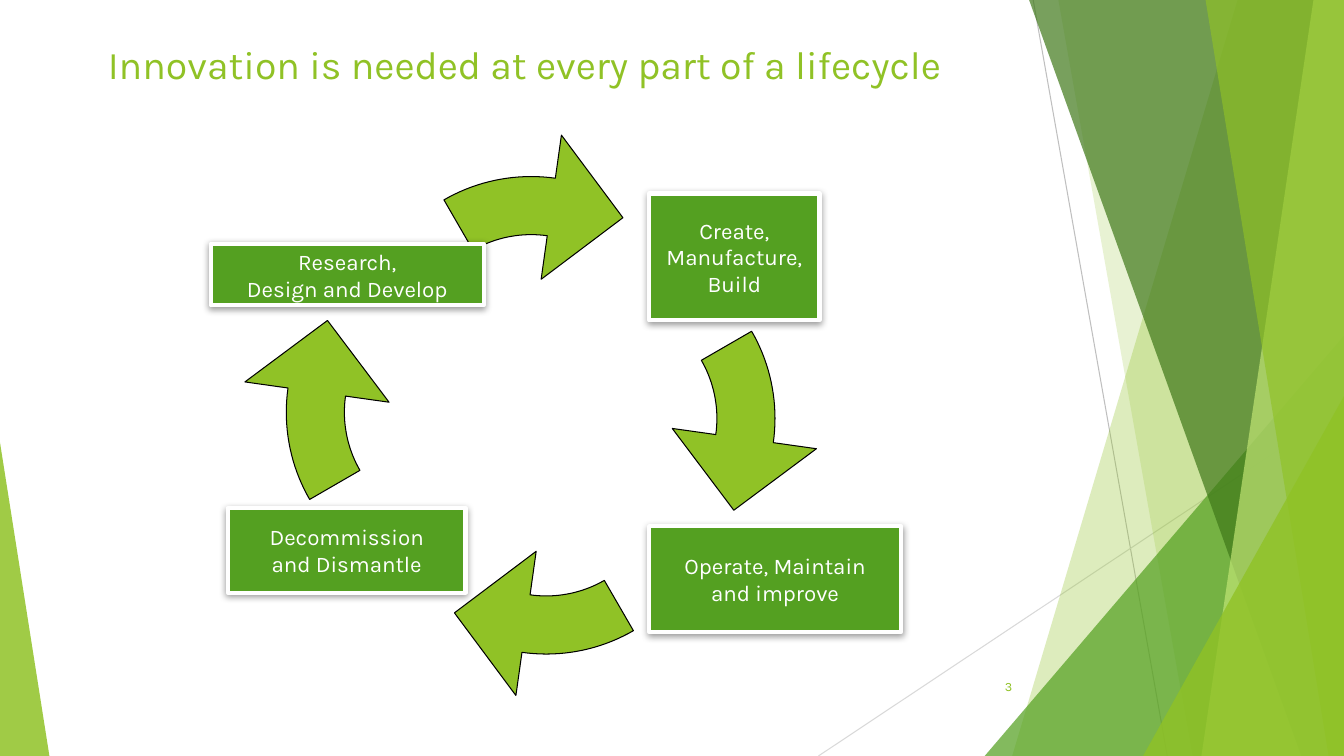
from math import cos, radians, sin

from lxml.etree import SubElement
from pptx import Presentation
from pptx.dml.color import RGBColor
from pptx.enum.shapes import MSO_CONNECTOR as Connector, MSO_SHAPE as Preset
from pptx.enum.text import MSO_ANCHOR as Anchor, MSO_AUTO_SIZE as AutoSize, PP_ALIGN as Align
from pptx.oxml.ns import qn
from pptx.util import Pt

FONT = "Karla"
LIME, GREEN, WHITE, BLACK = "90C226", "54A021", "FFFFFF", "000000"

# Coloured panels from back to front: x of the left edge at top and bottom
BACK_BANDS = [(884, 723, LIME, 30), (756, 851.8, LIME, 20)]
FRONT_BANDS = [(735.1, 929.5, "3F7819", 70), (938.2, 858.2, "C0E474", 70),
               (861.1, 949, LIME, 65)]
HAIRLINES = [(738, 0, 833.8, 540, "BFBFBF"), (960, 290.2, 584.6, 540, "D9D9D9")]

# Stage boxes, relative to the cycle: left, top, width, height, lines, wrap
STAGES = [
    (0.5, 78.2, 195.1, 43.9, ["Research,", "Design and Develop"], False),
    (313.7, 42.2, 121.7, 90.7, ["Create, Manufacture, Build"], True),
    (313.7, 279.8, 180, 75.6, ["Operate, Maintain", "and improve"], False),
    (12.7, 266.9, 169.9, 60.5, ["Decommission", "and Dismantle"], False),
]
# Centres of the arcs the arrows follow, each a quarter turn further
ARROW_CENTRES = [(229.4, 154.6), (279.1, 202.9), (240.2, 246.7), (179, 198.5)]
OUTER, INNER = 124.5, 83
TAIL_ANGLE, HEAD_ANGLE = -30, 8
HEAD = [(155.6, HEAD_ANGLE), (115.5, 34.6), (51.6, HEAD_ANGLE)]


def colour(hex_string):
    return RGBColor.from_string(hex_string)


def paint(shape, fill, opacity=100, line=None, weight=0.75):
    shape.shadow.inherit = False
    shape.fill.solid()
    shape.fill.fore_color.rgb = colour(fill)
    if opacity < 100:
        tint = shape.fill._xPr.find(qn("a:solidFill"))[0]
        SubElement(tint, qn("a:alpha"), val=str(opacity * 1000))
    if line:
        shape.line.color.rgb = colour(line)
        shape.line.width = Pt(weight)
    else:
        shape.line.fill.background()


def add_drop_shadow(shape):
    effects = shape._element.spPr.find(qn("a:effectLst"))
    drop = SubElement(effects, qn("a:outerShdw"), blurRad=str(Pt(5)), dist=str(Pt(1.6)),
                      dir="5400000", algn="ctr", rotWithShape="0")
    black = SubElement(drop, qn("a:srgbClr"), val=BLACK)
    SubElement(black, qn("a:alpha"), val="38000")


def write(frame, lines, size, hex_string, align):
    frame.vertical_anchor = Anchor.MIDDLE
    for number, line in enumerate(lines):
        paragraph = frame.add_paragraph() if number else frame.paragraphs[0]
        paragraph.alignment = align
        run = paragraph.add_run()
        run.text = line
        run.font.name = FONT
        run.font.size = Pt(size)
        run.font.color.rgb = colour(hex_string)


def add_outline(slide, points):
    corners = [(Pt(x), Pt(y)) for x, y in points]
    builder = slide.shapes.build_freeform(*corners[0])
    builder.add_line_segments(corners[1:], close=True)
    return builder.convert_to_shape()


def add_triangle(slide, left, top, right, bottom, apex, fill, opacity):
    """Draw a triangle whose apex lies at the given share of its width."""
    triangle = slide.shapes.add_shape(Preset.ISOSCELES_TRIANGLE, Pt(left), Pt(top),
                                      Pt(right - left), Pt(bottom - top))
    triangle.adjustments[0] = apex
    paint(triangle, fill, opacity)


def add_backdrop(slide, left, top, width, height):
    right, bottom = left + width, top + height

    def add_bands(bands):
        for upper, lower, fill, opacity in bands:
            band = add_outline(slide, [(left + upper, top), (right, top),
                                       (right, bottom), (left + lower, bottom)])
            paint(band, fill, opacity)

    for x1, y1, x2, y2, grey in HAIRLINES:
        hairline = slide.shapes.add_connector(Connector.STRAIGHT, Pt(left + x1), Pt(top + y1),
                                              Pt(left + x2), Pt(top + y2))
        hairline.line.color.rgb = colour(grey)
        hairline.line.width = Pt(0.75)
        SubElement(hairline._element.spPr, qn("a:effectLst"))
    add_bands(BACK_BANDS)
    add_triangle(slide, left + 703.4, top + 239.8, right, bottom, 1, GREEN, 72)
    add_bands(FRONT_BANDS)
    add_triangle(slide, left + 816.5, top + 283, right, bottom, 1, LIME, 80)
    add_triangle(slide, left, top + 316.1, left + 35.3, bottom, 0, LIME, 85)


def add_title(slide, left, top, width, height):
    title = slide.shapes.title
    title.left, title.top, title.width, title.height = map(Pt, (left, top, width, height))
    title.text_frame.auto_size = AutoSize.NONE
    write(title.text_frame, ["Innovation is needed at every part of a lifecycle"],
          28, LIME, Align.LEFT)


def add_page_number(slide, left, top, width, height):
    number = slide.shapes.add_textbox(Pt(left), Pt(top), Pt(width), Pt(height))
    number.text_frame.word_wrap = True
    write(number.text_frame, ["3"], 9, LIME, Align.RIGHT)


def add_curved_arrow(slide, centre_x, centre_y, turn):
    """Draw an arrow along an arc; angles run clockwise from the top."""
    sweep = range(TAIL_ANGLE, HEAD_ANGLE + 1, 2)
    polar = [(OUTER, angle) for angle in sweep] + HEAD
    polar += [(INNER, angle) for angle in reversed(sweep)]
    arrow = add_outline(slide, [(centre_x + radius * sin(radians(angle + turn)),
                                 centre_y - radius * cos(radians(angle + turn)))
                                for radius, angle in polar])
    paint(arrow, LIME, line=BLACK)


def add_stage(slide, left, top, width, height, lines, wrap):
    stage = slide.shapes.add_shape(Preset.RECTANGLE, Pt(left), Pt(top), Pt(width), Pt(height))
    paint(stage, GREEN, line=WHITE, weight=3)
    add_drop_shadow(stage)
    frame = stage.text_frame
    frame.margin_left = frame.margin_top = frame.margin_right = frame.margin_bottom = 0
    frame.word_wrap = wrap
    write(frame, lines, 16, WHITE, Align.CENTER)


def add_lifecycle(slide, left, top):
    for step, (x, y) in enumerate(ARROW_CENTRES):
        add_curved_arrow(slide, left + x, top + y, 90 * step)
    for x, y, *details in STAGES:
        add_stage(slide, left + x, top + y, *details)


def main():
    deck = Presentation()
    deck.slide_width, deck.slide_height = Pt(960), Pt(540)
    slide = deck.slides.add_slide(deck.slide_layouts[5])
    add_backdrop(slide, 0, 0, 960, 540)
    add_page_number(slide, 676.1, 475.9, 54, 28.8)
    add_title(slide, 69.8, 12.2, 769.7, 67)
    add_lifecycle(slide, 150, 96)
    deck.save("out.pptx")


if __name__ == "__main__":
    main()
